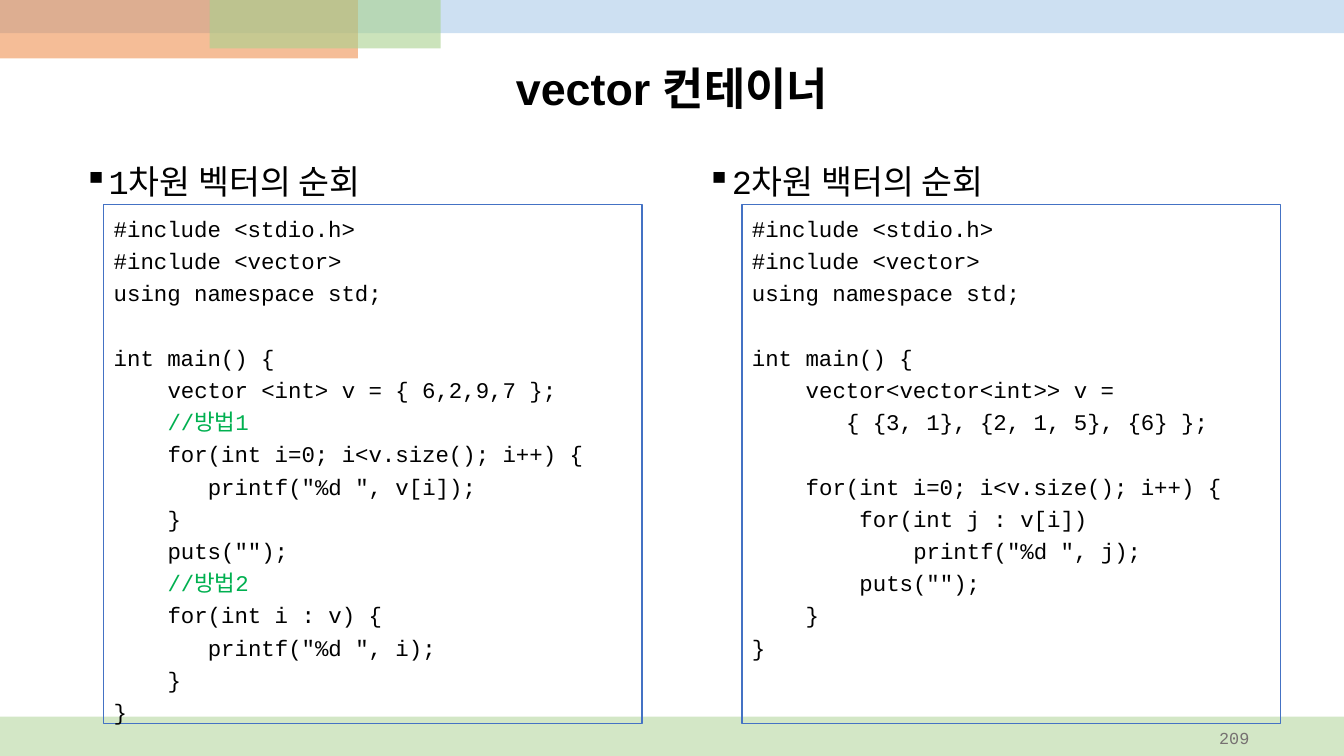
"""Build the slide on walking through one- and two-dimensional vectors."""
from lxml.etree import SubElement
from pptx import Presentation
from pptx.dml.color import RGBColor
from pptx.enum.shapes import MSO_SHAPE
from pptx.enum.text import MSO_ANCHOR, PP_ALIGN
from pptx.oxml.ns import qn
from pptx.util import Inches, Pt

BLACK = RGBColor(0x00, 0x00, 0x00)
GRAY = RGBColor(0x76, 0x71, 0x71)
GREEN = RGBColor(0x00, 0xB0, 0x50)
BLUE = RGBColor(0x44, 0x72, 0xC4)
LEAF = RGBColor(0xA9, 0xD1, 0x8E)
SKY = RGBColor(0x9D, 0xC3, 0xE6)
ORANGE = RGBColor(0xED, 0x7D, 0x31)
MONO = "Courier New"
CELL = 0.6 * 16 / 72
PITCH = 23

LOOP = """#include <stdio.h>
#include <vector>
using namespace std;

int main() {
    vector <int> v = { 6,2,9,7 };
    //방법1
    for(int i=0; i<v.size(); i++) {
       printf("%d ", v[i]);
    }
    puts("");
    //방법2
    for(int i : v) {
       printf("%d ", i);
    }
}"""
NESTED = """#include <stdio.h>
#include <vector>
using namespace std;

int main() {
    vector<vector<int>> v =
       { {3, 1}, {2, 1, 5}, {6} };

    for(int i=0; i<v.size(); i++) {
        for(int j : v[i])
            printf("%d ", j);
        puts("");
    }
}"""


def add_run(para, text, size, color=BLACK, face=MONO):
    run = para.add_run()
    run.text = text
    run.font.size = Pt(size)
    run.font.name = face
    run.font.color.rgb = color
    return run


def add_rect(left, top, width, height):
    rect = slide.shapes.add_shape(MSO_SHAPE.RECTANGLE, Inches(left),
                                  Inches(top), Inches(width), Inches(height))
    rect.shadow.inherit = False
    return rect


deck = Presentation()
deck.slide_width = Inches(13.33)
deck.slide_height = Inches(7.5)
slide = deck.slides.add_slide(deck.slide_layouts[5])

bands = [
    (0, 7.11, 13.33, 0.39, LEAF, 50),
    (0, 0, 13.33, 0.33, SKY, 50),
    (0, 0, 3.55, 0.58, ORANGE, 50),
    (2.08, 0, 2.29, 0.48, LEAF, 60),
]
for left, top, width, height, color, alpha in bands:
    band = add_rect(left, top, width, height)
    band.fill.solid()
    band.fill.fore_color.rgb = color
    band.line.fill.background()
    tint = band.fill._xPr.find(qn("a:solidFill"))[0]
    SubElement(tint, qn("a:alpha"), val=str(alpha * 1000))

title = slide.shapes.title
title.left, title.top = Inches(0.73), Inches(0.49)
title.width, title.height = Inches(11.87), Inches(0.82)
title.text_frame.vertical_anchor = MSO_ANCHOR.MIDDLE
para = title.text_frame.paragraphs[0]
para.alignment = PP_ALIGN.CENTER
para.line_spacing = 0.9
add_run(para, "vector 컨테이너", 32, face="Arial").font.bold = True

columns = [
    (0.73, "1차원 벡터의 순회", 1.03, LOOP),
    (6.91, "2차원 백터의 순회", 7.36, NESTED),
]
for left, topic, edge, code in columns:
    head = slide.shapes.add_textbox(Inches(left), Inches(1.47),
                                    Inches(5.69), Inches(5.51))
    head.text_frame.word_wrap = True
    para = head.text_frame.paragraphs[0]
    para.line_spacing = 1.2
    para.space_before = Pt(10)
    props = para._p.get_or_add_pPr()
    props.set("marL", str(Inches(0.25)))
    props.set("indent", str(-Inches(0.25)))
    SubElement(props, qn("a:buChar"), char="▪")
    add_run(para, topic, 24)

    box = add_rect(edge, 2.03, 5.34, 5.15)
    box.fill.background()
    box.line.color.rgb = BLUE
    box.line.width = Pt(1)
    frame = box.text_frame
    frame.word_wrap = True
    frame.vertical_anchor = MSO_ANCHOR.TOP
    para, gap = frame.paragraphs[0], 0
    for row in code.split("\n"):
        text = row.lstrip()
        if not text:
            gap = PITCH
            continue
        if para.runs:
            para = frame.add_paragraph()
        para.alignment = PP_ALIGN.LEFT
        para.line_spacing = 1.2
        para.space_before = Pt(gap)
        depth = len(row) - len(text)
        para._p.get_or_add_pPr().set("marL", str(Inches(depth * CELL)))
        add_run(para, text, 16, GREEN if text.startswith("//") else BLACK)
        gap = 0

page = slide.shapes.add_textbox(Inches(9.49), Inches(7.14),
                                Inches(3), Inches(0.36))
page.text_frame.word_wrap = True
page.text_frame.vertical_anchor = MSO_ANCHOR.MIDDLE
para = page.text_frame.paragraphs[0]
para.alignment = PP_ALIGN.RIGHT
add_run(para, "209", 12, GRAY)

deck.save("out.pptx")
